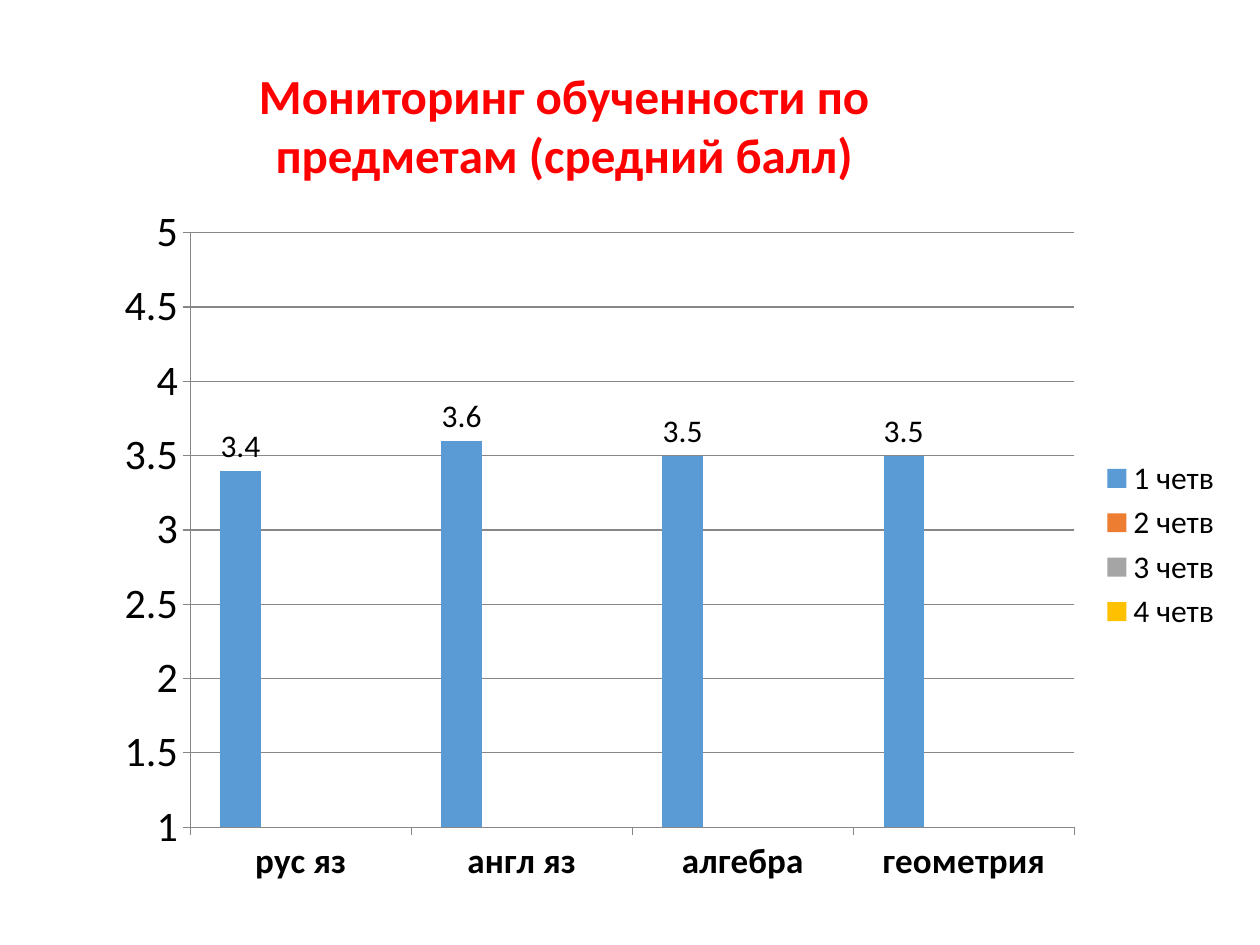
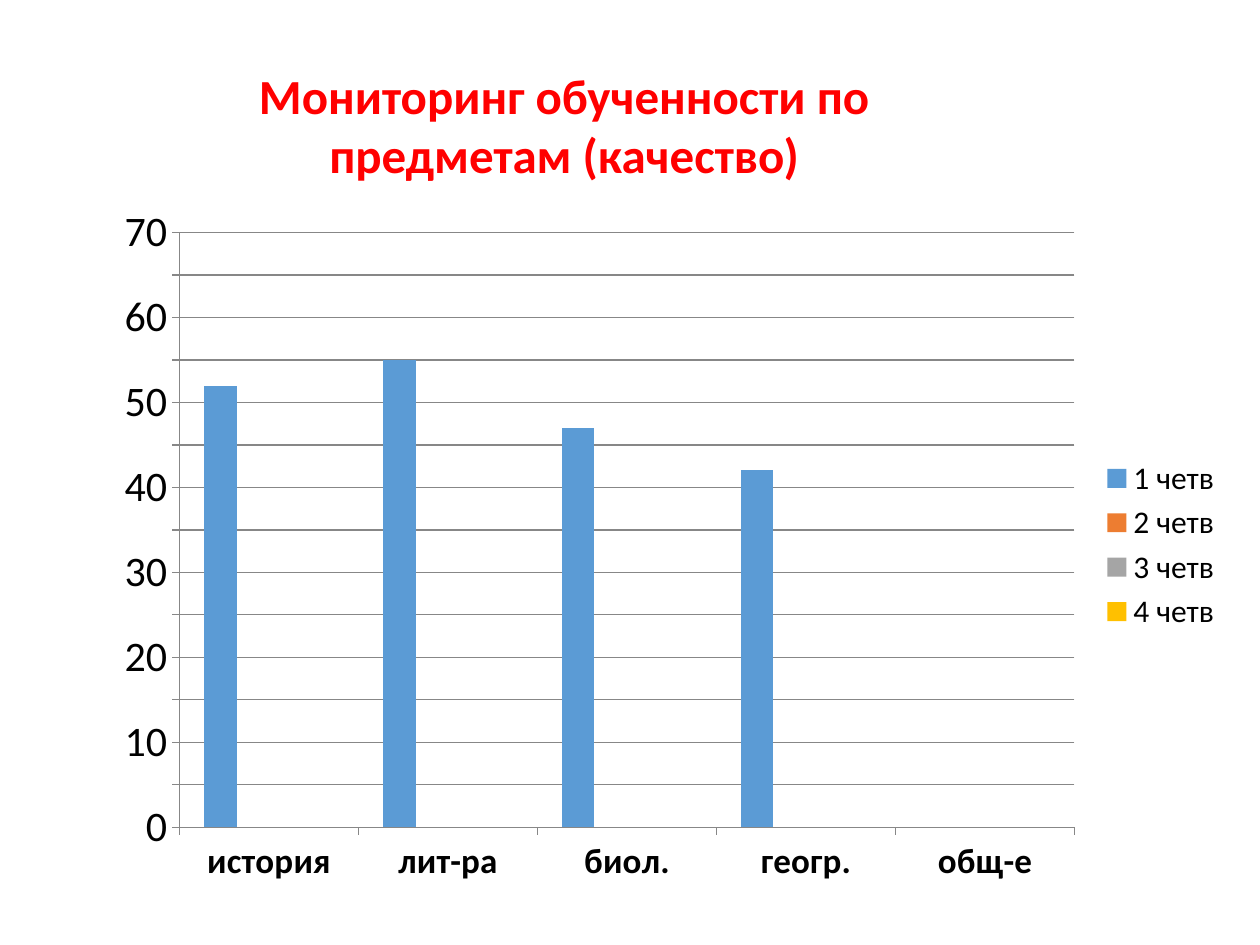
from dataclasses import dataclass

from pptx import Presentation
from pptx.chart.data import CategoryChartData
from pptx.dml.color import RGBColor
from pptx.enum.chart import XL_CHART_TYPE, XL_LABEL_POSITION, XL_LEGEND_POSITION, XL_TICK_MARK
from pptx.enum.text import MSO_ANCHOR, PP_ALIGN
from pptx.util import Emu, Pt

EMU_PER_PX = 914400 / 126


@dataclass(frozen=True)
class Theme:
    font: str = "Calibri"
    title_color: RGBColor = RGBColor(0xFF, 0x00, 0x00)
    text_color: RGBColor = RGBColor(0x00, 0x00, 0x00)
    grid_color: RGBColor = RGBColor(0x87, 0x87, 0x87)
    quarter_colors: tuple = ("5B9BD5", "ED7D31", "A5A5A5", "FFC000")
    title_size: Pt = Pt(28)
    chart_size: Pt = Pt(18)
    category_size: Pt = Pt(20)
    value_size: Pt = Pt(24)


@dataclass(frozen=True)
class Monitoring:
    title: str
    scores: dict
    minimum: float
    maximum: float
    step: float
    labelled_quarters: tuple


THEME = Theme()
SLIDE_SIZE = (1260, 945)
TITLE_BOX = (125, 59, 878, 131)
CHART_BOX = (102, 193, 1133, 704)
QUARTERS = ("1 четв", "2 четв", "3 четв", "4 четв")

MONITORINGS = (
    Monitoring(
        "Мониторинг обученности по предметам (средний балл)",
        {"рус яз": 3.4, "англ яз": 3.6, "алгебра": 3.5, "геометрия": 3.5},
        1, 5, 0.5, ("1 четв", "4 четв"),
    ),
    Monitoring(
        "Мониторинг обученности по предметам (качество)",
        {"история": 52, "лит-ра": 55, "биол.": 47, "геогр.": 42, "общ-е": None},
        0, 70, 5, ("4 четв",),
    ),
)


def px(length):
    return Emu(round(length * EMU_PER_PX))


def format_font(font, size, color, bold=False):
    font.name = THEME.font
    font.size = size
    font.bold = bold
    font.color.rgb = color


def add_title(slide, box, text):
    title = slide.shapes.title
    title.left, title.top, title.width, title.height = map(px, box)
    title.text_frame.word_wrap = True
    title.text_frame.vertical_anchor = MSO_ANCHOR.TOP
    paragraph = title.text_frame.paragraphs[0]
    paragraph.alignment = PP_ALIGN.CENTER
    run = paragraph.add_run()
    run.text = text
    format_font(run.font, THEME.title_size, THEME.title_color, bold=True)


def format_axis(axis, size, bold=False):
    axis.major_tick_mark = XL_TICK_MARK.OUTSIDE
    axis.minor_tick_mark = XL_TICK_MARK.NONE
    axis.format.line.color.rgb = THEME.grid_color
    axis.tick_labels.number_format = "General"
    axis.tick_labels.number_format_is_linked = False
    format_font(axis.tick_labels.font, size, THEME.text_color, bold)


def format_series(series, color, labelled):
    series.format.fill.solid()
    series.format.fill.fore_color.rgb = RGBColor.from_string(color)
    series.invert_if_negative = False
    if labelled:
        labels = series.data_labels
        labels.show_value = True
        labels.position = XL_LABEL_POSITION.OUTSIDE_END
        format_font(labels.font, THEME.chart_size, THEME.text_color)


def add_quarter_chart(slide, box, monitoring):
    data = CategoryChartData()
    data.categories = list(monitoring.scores)
    for index, quarter in enumerate(QUARTERS):
        values = monitoring.scores.values() if index == 0 else [None] * len(monitoring.scores)
        data.add_series(quarter, values)
    chart = slide.shapes.add_chart(XL_CHART_TYPE.COLUMN_CLUSTERED, *map(px, box), data).chart

    chart.has_title = False
    format_font(chart.font, THEME.chart_size, THEME.text_color)
    chart.has_legend = True
    chart.legend.position = XL_LEGEND_POSITION.RIGHT
    chart.legend.include_in_layout = False

    format_axis(chart.category_axis, THEME.category_size, bold=True)
    value_axis = chart.value_axis
    format_axis(value_axis, THEME.value_size)
    value_axis.minimum_scale = monitoring.minimum
    value_axis.maximum_scale = monitoring.maximum
    value_axis.major_unit = monitoring.step
    value_axis.has_major_gridlines = True
    value_axis.major_gridlines.format.line.color.rgb = THEME.grid_color

    plot = chart.plots[0]
    plot.gap_width = 150
    plot.overlap = 0
    plot.vary_by_categories = False
    for series, color in zip(plot.series, THEME.quarter_colors):
        format_series(series, color, series.name in monitoring.labelled_quarters)


def add_monitoring_slide(presentation, monitoring):
    slide = presentation.slides.add_slide(presentation.slide_layouts.get_by_name("Title Only"))
    add_title(slide, TITLE_BOX, monitoring.title)
    add_quarter_chart(slide, CHART_BOX, monitoring)


def main():
    presentation = Presentation()
    presentation.slide_width, presentation.slide_height = map(px, SLIDE_SIZE)
    for monitoring in MONITORINGS:
        add_monitoring_slide(presentation, monitoring)
    presentation.save("out.pptx")


if __name__ == "__main__":
    main()
